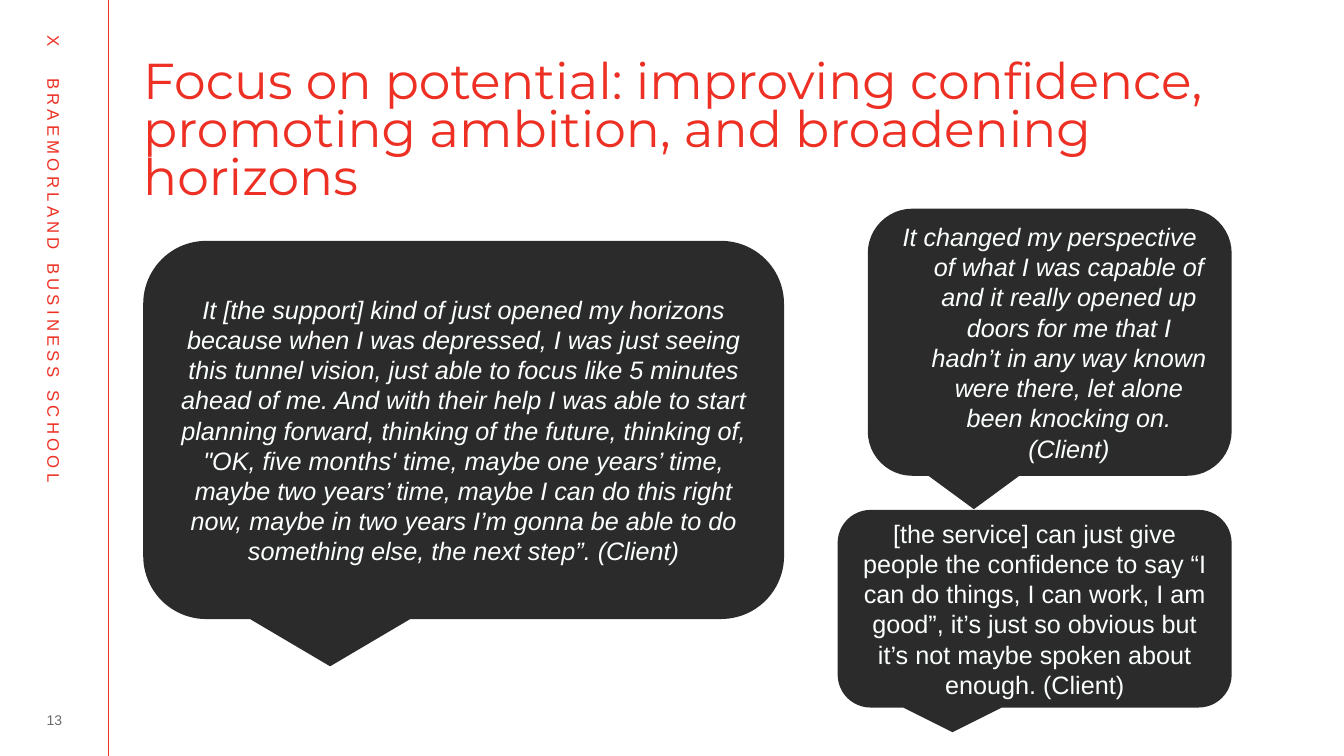
from lxml.etree import SubElement
from pptx import Presentation
from pptx.dml.color import RGBColor
from pptx.enum.shapes import MSO_CONNECTOR, MSO_SHAPE
from pptx.enum.text import MSO_ANCHOR, MSO_AUTO_SIZE, PP_ALIGN
from pptx.oxml.ns import qn
from pptx.util import Cm, Pt

RED = RGBColor(0xEE, 0x30, 0x24)
TITLE_RED = RGBColor(0xED, 0x2F, 0x24)
DARK = RGBColor(0x2B, 0x2B, 0x2B)
GREY = RGBColor(0x6B, 0x6B, 0x6B)
PALE = RGBColor(0xFC, 0xFF, 0xFF)

WIDTH, HEIGHT = 33.87, 19.05


class Deck:
    """Holds the style and the current slide."""

    def __init__(self):
        self.show = Presentation()
        self.show.slide_width = Cm(WIDTH)
        self.show.slide_height = Cm(HEIGHT)
        self.slide = self.show.slides.add_slide(self.show.slide_layouts[5])

    def label(self, frame, text, size, color, font="Arial", align=PP_ALIGN.LEFT):
        frame.word_wrap = True
        para = frame.paragraphs[0]
        para.text = text
        para.alignment = align
        para.font.name = font
        para.font.size = Pt(size)
        para.font.color.rgb = color
        return para

    def trim(self, frame, top=0):
        frame.margin_left = frame.margin_right = frame.margin_bottom = 0
        frame.margin_top = Cm(top)

    def title(self, text, left, top, width, height):
        shape = self.slide.shapes.title
        shape.left, shape.top = Cm(left), Cm(top)
        shape.width, shape.height = Cm(width), Cm(height)
        frame = shape.text_frame
        frame.auto_size = MSO_AUTO_SIZE.NONE
        frame.vertical_anchor = MSO_ANCHOR.TOP
        self.trim(frame, 0.53)
        para = self.label(frame, text, 36, TITLE_RED, "Montserrat")
        para.line_spacing = 0.8

    def rule(self, x):
        line = self.slide.shapes.add_connector(
            MSO_CONNECTOR.STRAIGHT, Cm(x), 0, Cm(x), Cm(HEIGHT))
        line.line.color.rgb = RED
        line.line.width = Pt(0.5)
        SubElement(line._element.spPr, qn("a:effectLst"))

    def box(self, left, top, width, height):
        return self.slide.shapes.add_textbox(
            Cm(left), Cm(top), Cm(width), Cm(height))

    def banner(self, text, left, top, width, height):
        box = self.box(left, top, width, height)
        box.rotation = 90
        para = self.label(box.text_frame, text, 12, RED)
        # Tab stop after the mark, and wide letter spacing
        props = para._p.get_or_add_pPr()
        tabs = SubElement(props, qn("a:tabLst"))
        SubElement(tabs, qn("a:tab"), pos=str(Cm(1.07)), algn="l")
        props.insert(0, tabs)
        for run in para.runs:
            run._r.get_or_add_rPr().set("spc", "300")

    def number(self, text, left, top, width, height):
        frame = self.box(left, top, width, height).text_frame
        frame.vertical_anchor = MSO_ANCHOR.MIDDLE
        self.trim(frame)
        self.label(frame, text, 10, GREY, align=PP_ALIGN.CENTER)

    def quote(self, text, left, top, width, height,
              italic=True, after=10, hang=0):
        shape = self.slide.shapes.add_shape(
            MSO_SHAPE.ROUNDED_RECTANGULAR_CALLOUT,
            Cm(left), Cm(top), Cm(width), Cm(height))
        shape.shadow.inherit = False
        shape.fill.solid()
        shape.fill.fore_color.rgb = DARK
        shape.line.fill.background()
        frame = shape.text_frame
        frame.vertical_anchor = MSO_ANCHOR.MIDDLE
        para = self.label(frame, text, 18, PALE, align=PP_ALIGN.CENTER)
        para.font.italic = italic
        para.space_after = Pt(after)
        if hang:
            props = para._p.get_or_add_pPr()
            props.set("marL", str(Cm(hang)))
            props.set("indent", str(-Cm(hang)))


def main():
    deck = Deck()

    # Side strip
    deck.rule(2.74)
    deck.banner("X\tBRAEMORLAND BUSINESS SCHOOL", -5.84, 7.47, 14.4, 0.76)
    deck.number("13", 0.66, 17.83, 1.42, 0.64)

    # Heading
    deck.title("Focus on potential: improving confidence, promoting ambition, "
               "and broadening horizons", 3.61, 0.99, 28.8, 4.27)

    # Client quotes
    deck.quote("It [the support] kind of just opened my horizons because when "
               "I was depressed, I was just seeing this tunnel vision, just "
               "able to focus like 5 minutes ahead of me. And with their help "
               "I was able to start planning forward, thinking of the future, "
               "thinking of, \"OK, five months' time, maybe one years’ time, "
               "maybe two years’ time, maybe I can do this right now, maybe in "
               "two years I’m gonna be able to do something else, the next "
               "step”. (Client)", 3.61, 6.07, 16.15, 9.53)
    deck.quote("It changed my perspective of what I was capable of and it "
               "really opened up doors for me that I hadn’t in any way known "
               "were there, let alone been knocking on. (Client)",
               21.87, 5.26, 9.17, 6.73, hang=0.97)
    deck.quote("[the service] can just give people the confidence to say “I "
               "can do things, I can work, I am good”, it’s just so obvious "
               "but it’s not maybe spoken about enough. (Client)",
               21.11, 12.85, 9.93, 4.98, italic=False, after=0)

    deck.show.save("out.pptx")


if __name__ == "__main__":
    main()
